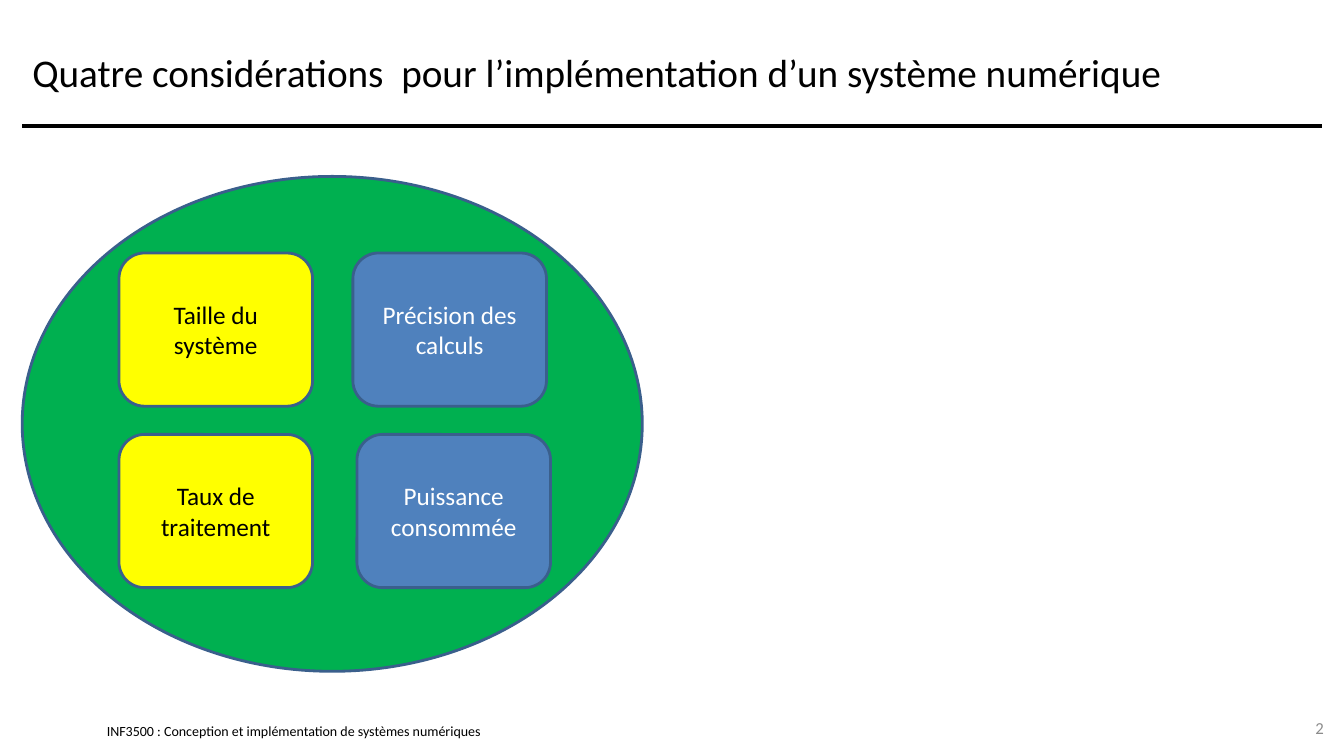
from dataclasses import dataclass

from lxml import etree
from pptx import Presentation
from pptx.dml.color import RGBColor
from pptx.enum.shapes import MSO_CONNECTOR, MSO_SHAPE
from pptx.enum.text import MSO_ANCHOR, MSO_AUTO_SIZE, PP_ALIGN
from pptx.oxml.ns import qn
from pptx.util import Inches, Pt

LEFT, CENTER, RIGHT = PP_ALIGN.LEFT, PP_ALIGN.CENTER, PP_ALIGN.RIGHT
MIDDLE = MSO_ANCHOR.MIDDLE
OVAL, ROUND = MSO_SHAPE.OVAL, MSO_SHAPE.ROUNDED_RECTANGLE
STRAIGHT = MSO_CONNECTOR.STRAIGHT
TITLE_ONLY = 5


@dataclass(frozen=True)
class Theme:
    font: str = "Calibri"
    black: str = "000000"
    white: str = "FFFFFF"
    gray: str = "8C8C8C"
    green: str = "00B050"
    yellow: str = "FFFF00"
    blue: str = "4F81BD"
    edge: str = "3A5F8C"
    title: int = 28
    body: int = 18
    page: int = 12
    foot: int = 10
    rule: int = 3
    stroke: int = 2


THEME = Theme()


def color(code):
    return RGBColor.from_string(code)


def write(shape, text, size, ink, align=LEFT):
    frame = shape.text_frame
    frame.word_wrap = True
    frame.auto_size = MSO_AUTO_SIZE.NONE
    frame.vertical_anchor = MIDDLE
    para = frame.paragraphs[0]
    para.alignment = align
    run = para.add_run()
    run.text = text
    run.font.name = THEME.font
    run.font.size = Pt(size)
    run.font.color.rgb = color(ink)
    return frame


def add_title(slide, text):
    title = slide.shapes.title
    title.left, title.top = Inches(0.22), Inches(0.17)
    title.width, title.height = Inches(12.89), Inches(1.08)
    write(title, text, THEME.title, THEME.black)


def add_label(slide, box, text, size, ink, align=LEFT):
    label = slide.shapes.add_textbox(*map(Inches, box))
    return write(label, text, size, ink, align)


def add_rule(slide, left, right, top):
    rule = slide.shapes.add_connector(
        STRAIGHT, Inches(left), Inches(top), Inches(right), Inches(top))
    rule.line.color.rgb = color(THEME.black)
    rule.line.width = Pt(THEME.rule)
    etree.SubElement(rule._element.spPr, qn("a:effectLst"))


def add_form(slide, kind, box, fill):
    form = slide.shapes.add_shape(kind, *map(Inches, box))
    form.shadow.inherit = False
    form.fill.solid()
    form.fill.fore_color.rgb = color(fill)
    form.line.color.rgb = color(THEME.edge)
    form.line.width = Pt(THEME.stroke)
    return form


def add_card(slide, left, top, text, fill, ink):
    card = add_form(slide, ROUND, (left, top, 1.92, 1.52), fill)
    write(card, text, THEME.body, ink, CENTER)


def main():
    deck = Presentation()
    deck.slide_width, deck.slide_height = Inches(13.33), Inches(7.5)
    slide = deck.slides.add_slide(deck.slide_layouts[TITLE_ONLY])

    # Header
    add_rule(slide, 0.22, 13.11, 1.25)
    add_title(slide, "Quatre considérations  pour l’implémentation "
                     "d’un système numérique")

    # Four considerations inside the ellipse
    add_form(slide, OVAL, (0.22, 1.75, 6.15, 4.91), THEME.green)
    blue = THEME.blue, THEME.white
    yellow = THEME.yellow, THEME.black
    upper, lower = 2.51, 4.31
    add_card(slide, 3.5, upper, "Précision des calculs", *blue)
    add_card(slide, 3.54, lower, "Puissance consommée", *blue)
    add_card(slide, 1.18, upper, "Taille du système", *yellow)
    add_card(slide, 1.18, lower, "Taux de traitement", *yellow)

    # Footer and page number
    foot = add_label(
        slide, (1.06, 7.17, 5.11, 0.17),
        "INF3500 : Conception et implémentation de systèmes numériques",
        THEME.foot, THEME.black)
    foot.margin_left = foot.margin_right = 0
    foot.margin_top = foot.margin_bottom = 0
    add_label(slide, (12.56, 7.02, 0.67, 0.4), "2",
              THEME.page, THEME.gray, RIGHT)

    deck.save("out.pptx")


if __name__ == "__main__":
    main()
